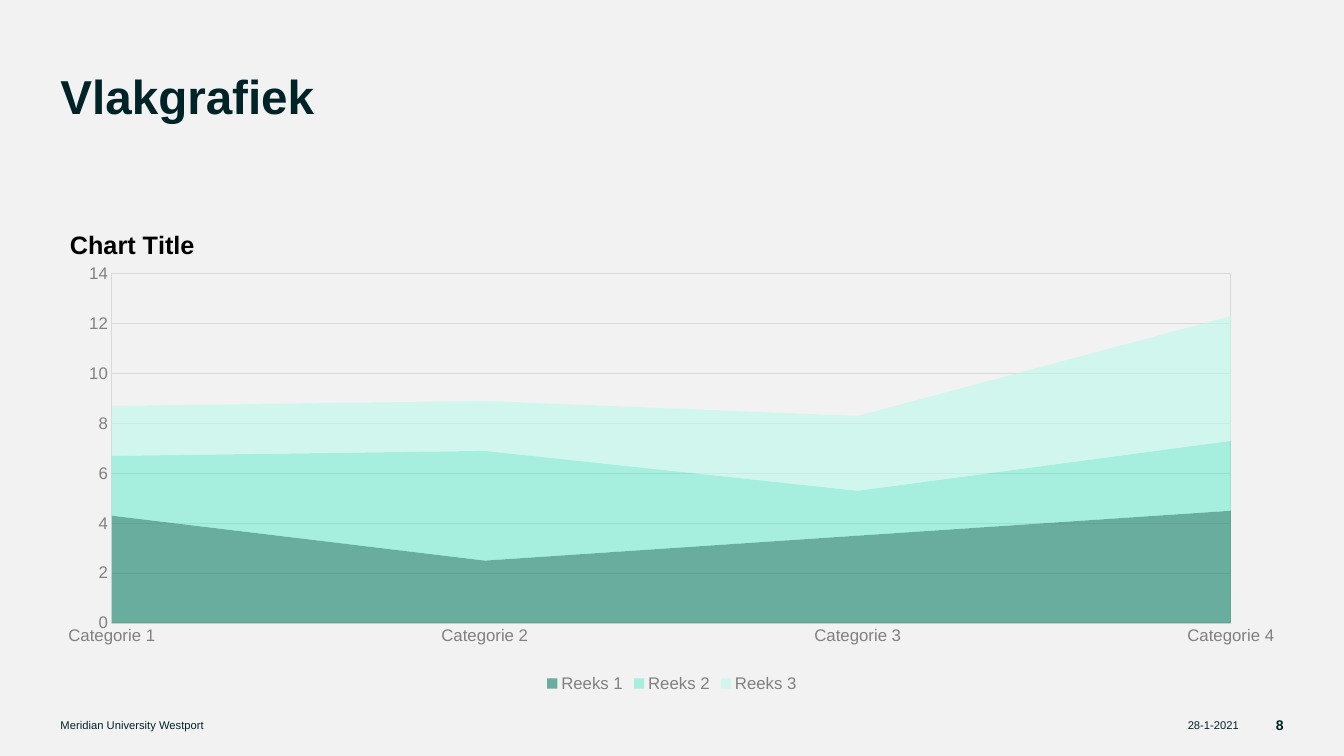
import pptx
import pptx.chart.data
import pptx.dml.color
import pptx.enum.chart
import pptx.enum.text
import pptx.oxml
import pptx.oxml.ns
import pptx.util

SLIDE_WIDTH, SLIDE_HEIGHT = 13.33, 7.5
MARGIN = 0.6
CONTENT_WIDTH = SLIDE_WIDTH - 2 * MARGIN
FONT = "Arial"
COLORS = {
    "background": "F2F2F2",
    "ink": "002328",
    "chart_title": "000000",
    "label": "808080",
    "line": "D9D9D9",
}
CATEGORIES = ["Categorie 1", "Categorie 2", "Categorie 3", "Categorie 4"]
SERIES = [
    ("Reeks 1", (4.3, 2.5, 3.5, 4.5), "0C8066", 60),
    ("Reeks 2", (2.4, 4.4, 1.8, 2.8), "34ECC3", 40),
    ("Reeks 3", (2, 2, 3, 5), "BBF9EB", 60),
]


def rgb(name):
    """Return the palette colour with this name."""
    return pptx.dml.color.RGBColor.from_string(COLORS[name])


def inches(box):
    """Turn a box of inches into slide lengths."""
    return [pptx.util.Inches(length) for length in box]


def style_font(font, size, color, bold=False):
    """Set face, size, colour and weight of a font."""
    font.name = FONT
    font.size = pptx.util.Pt(size)
    font.bold = bold
    font.color.rgb = rgb(color)


def style_line(line, color):
    """Make a thin line of a palette colour."""
    line.width = pptx.util.Pt(0.75)
    line.color.rgb = rgb(color)


def fill_frame(shape, text, size, anchor, alignment, bold=False):
    """Write one paragraph into a frame without insets."""
    frame = shape.text_frame
    frame.margin_left = frame.margin_right = frame.margin_top = frame.margin_bottom = 0
    frame.word_wrap = True
    frame.auto_size = pptx.enum.text.MSO_AUTO_SIZE.NONE
    frame.vertical_anchor = anchor
    frame.text = text
    paragraph = frame.paragraphs[0]
    paragraph.alignment = alignment
    style_font(paragraph.font, size, "ink", bold)
    return paragraph


def add_title(slide, box, text):
    """Place the slide title in its box."""
    title = slide.shapes.title
    title.left, title.top, title.width, title.height = inches(box)
    paragraph = fill_frame(title, text, 34, pptx.enum.text.MSO_ANCHOR.TOP,
                           pptx.enum.text.PP_ALIGN.LEFT, True)
    paragraph.line_spacing = pptx.util.Pt(32)


def add_footer(slide, box):
    """Place organisation, date and page number along the footer box."""
    left, top, width, height = box
    align = pptx.enum.text.PP_ALIGN
    cells = [
        (0, 10.79, "Meridian University Westport", 8, align.LEFT, False),
        (width - 1.2, 0.76, "28-1-2021", 8, align.RIGHT, False),
        (width - 0.29, 0.29, "8", 10, align.RIGHT, True),
    ]
    for offset, cell_width, text, size, alignment, bold in cells:
        cell = slide.shapes.add_textbox(*inches((left + offset, top, cell_width, height)))
        fill_frame(cell, text, size, pptx.enum.text.MSO_ANCHOR.MIDDLE, alignment, bold)


def manual_layout(parent, position, **values):
    """Replace the layout of a chart part with shares of the chart's size."""
    for layout in parent.findall(pptx.oxml.ns.qn("c:layout")):
        parent.remove(layout)
    target = '<c:layoutTarget val="inner"/>' if "w" in values else ""
    modes = "".join(f'<c:{axis}Mode val="edge"/>' for axis in "xy")
    shares = "".join(f'<c:{key} val="{value}"/>' for key, value in values.items())
    parent.insert(position, pptx.oxml.parse_xml(
        f'<c:layout {pptx.oxml.ns.nsdecls("c")}><c:manualLayout>'
        f"{target}{modes}{shares}</c:manualLayout></c:layout>"))


def style_axes(chart):
    """Format both axes and the horizontal grid."""
    for axis in (chart.category_axis, chart.value_axis):
        axis.major_tick_mark = pptx.enum.chart.XL_TICK_MARK.NONE
        axis.minor_tick_mark = pptx.enum.chart.XL_TICK_MARK.NONE
        style_font(axis.tick_labels.font, 12, "label")
    chart.category_axis.has_major_gridlines = False
    style_line(chart.category_axis.format.line, "line")
    value_axis = chart.value_axis
    value_axis.minimum_scale, value_axis.maximum_scale, value_axis.major_unit = 0, 14, 2
    value_axis.tick_labels.number_format = "General"
    value_axis.tick_labels.number_format_is_linked = False
    value_axis.format.line.fill.background()
    style_line(value_axis.major_gridlines.format.line, "line")


def style_series(chart):
    """Give each area its translucent fill."""
    for series, (_, _, color, opacity) in zip(chart.plots[0].series, SERIES):
        fill = series.format.fill
        fill.solid()
        fill.fore_color.rgb = pptx.dml.color.RGBColor.from_string(color)
        series.format.line.fill.background()
        for tint in series.format.element.xpath("c:spPr/a:solidFill/a:srgbClr"):
            tint.append(pptx.oxml.parse_xml(
                f'<a:alpha {pptx.oxml.ns.nsdecls("a")} val="{opacity * 1000}"/>'))


def add_area_chart(slide, box):
    """Place the stacked area chart with its title and legend."""
    data = pptx.chart.data.CategoryChartData()
    data.categories = CATEGORIES
    for name, values, _, _ in SERIES:
        data.add_series(name, values)
    chart = slide.shapes.add_chart(
        pptx.enum.chart.XL_CHART_TYPE.AREA_STACKED, *inches(box), data).chart
    style_font(chart.font, 10, "chart_title")

    chart.has_title = True
    chart.chart_title.text_frame.text = "Chart Title"
    style_font(chart.chart_title.text_frame.paragraphs[0].font, 18, "chart_title", True)
    chart.chart_title.include_in_layout = False
    chart.has_legend = True
    chart.legend.position = pptx.enum.chart.XL_LEGEND_POSITION.BOTTOM
    chart.legend.include_in_layout = False
    style_font(chart.legend.font, 12, "label")
    style_axes(chart)
    style_series(chart)

    space = chart.element
    manual_layout(space.xpath("c:chart/c:title")[0], 1, x=0.004, y=0.015)
    plot_area = space.xpath("c:chart/c:plotArea")[0]
    manual_layout(plot_area, 0, x=0.042, y=0.119, w=0.915, h=0.728)
    plot_area.append(pptx.oxml.parse_xml(
        f'<c:spPr {pptx.oxml.ns.nsdecls("c", "a")}><a:noFill/><a:ln w="9525"><a:solidFill>'
        f'<a:srgbClr val="{COLORS["line"]}"/></a:solidFill></a:ln></c:spPr>'))


def main():
    """Build the slide and save it."""
    presentation = pptx.Presentation()
    presentation.slide_width = pptx.util.Inches(SLIDE_WIDTH)
    presentation.slide_height = pptx.util.Inches(SLIDE_HEIGHT)
    slide = presentation.slides.add_slide(presentation.slide_layouts[5])
    slide.background.fill.solid()
    slide.background.fill.fore_color.rgb = rgb("background")
    add_title(slide, (MARGIN, 0.79, CONTENT_WIDTH, 0.78), "Vlakgrafiek")
    add_footer(slide, (MARGIN, 7.12, CONTENT_WIDTH, 0.14))
    add_area_chart(slide, (MARGIN, 2.15, CONTENT_WIDTH, 4.76))
    presentation.save("out.pptx")


if __name__ == "__main__":
    main()
